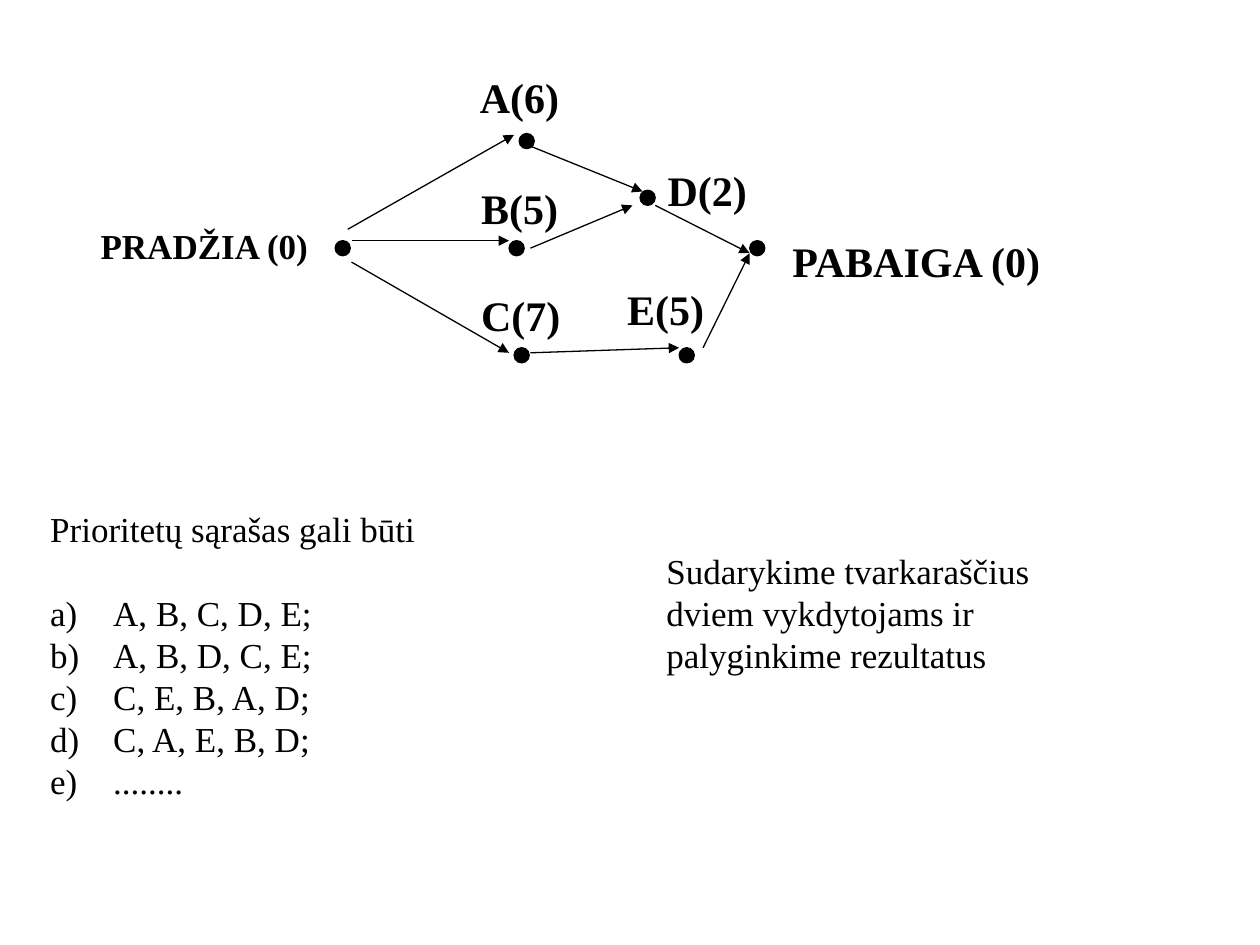
"""Build a slide with a task precedence graph and its priority lists."""
import pptx
import pptx.util
import pptx.dml.color
import pptx.enum.shapes
import pptx.oxml
import pptx.oxml.ns
from lxml import etree

Inches, Pt = pptx.util.Inches, pptx.util.Pt
BLACK = pptx.dml.color.RGBColor(0, 0, 0)
FONT = "Times New Roman"
DOT = 0.12
LINE = Pt(0.75)

HEADING = "Prioritetų sąrašas gali būti"
PRIORITIES = ["A, B, C, D, E;", "A, B, D, C, E;", "C, E, B, A, D;", "C, A, E, B, D;", "........"]
TASK = "Sudarykime tvarkaraščius dviem vykdytojams ir palyginkime rezultatus"

# name: dot left/top, label left/top/width/height, size
NODES = [
    ("PRADŽIA (0)", (2.66, 1.91), (0.7, 1.73, 2, 0.25), 20),
    ("A(6)", (4.12, 1.06), (3.71, 0.52, 0.94, 0.38), 24),
    ("B(5)", (4.04, 1.91), (3.72, 1.4, 1.23, 0.25), 24),
    ("C(7)", (4.08, 2.76), (3.72, 2.25, 0.99, 0.38), 24),
    ("D(2)", (5.08, 1.51), (5.2, 1.26, 0.99, 0.38), 24),
    ("E(5)", (5.39, 2.76), (4.88, 2.2, 0.94, 0.38), 24),
    ("PABAIGA (0)", (5.95, 1.91), (6.19, 1.82, 2.32, 0.38), 24),
]
ARROWS = [
    ((2.76, 1.82), (4.08, 1.07)),
    ((2.79, 1.91), (4.04, 1.91)),
    ((2.79, 2.08), (4.04, 2.8)),
    ((4.16, 1.14), (5.1, 1.52)),
    ((4.21, 1.97), (5.02, 1.63)),
    ((4.21, 2.8), (5.39, 2.76)),
    ((5.2, 1.63), (5.95, 2.01)),
    ((5.58, 2.76), (5.95, 2.01)),
]


def add_text(page, place, lines, size, bold=False, spacing=None):
    box = page.shapes.add_textbox(*map(Inches, place))
    frame = box.text_frame
    frame.word_wrap = True
    frame.text = "\n".join(lines)
    for para in frame.paragraphs:
        para.font.name, para.font.size, para.font.bold = FONT, Pt(size), bold
        para.font.color.rgb = BLACK
        para.line_spacing = spacing
    return frame.paragraphs


def add_dot(page, left, top):
    dot = page.shapes.add_shape(
        pptx.enum.shapes.MSO_SHAPE.FLOWCHART_CONNECTOR, *map(Inches, (left, top, DOT, DOT)))
    dot.shadow.inherit = False
    dot.fill.solid()
    dot.fill.fore_color.rgb = BLACK
    dot.line.color.rgb = BLACK
    dot.line.width = LINE


def add_arrow(page, start, end):
    arrow = page.shapes.add_connector(
        pptx.enum.shapes.MSO_CONNECTOR.STRAIGHT, *map(Inches, start + end))
    arrow.line.color.rgb = BLACK
    arrow.line.width = LINE
    qn = pptx.oxml.ns.qn
    etree.SubElement(arrow.line._get_or_add_ln(), qn("a:tailEnd"), type="triangle")
    etree.SubElement(arrow._element.spPr, qn("a:effectLst"))


def add_letter(para):
    props = para._p.get_or_add_pPr()
    props.set("marL", str(Inches(0.5)))
    props.set("indent", str(-Inches(0.5)))
    bullet = pptx.oxml.parse_xml(
        f'<a:buAutoNum {pptx.oxml.ns.nsdecls("a")} type="alphaLcParenR"/>')
    props.insert_element_before(bullet, "a:tabLst", "a:defRPr", "a:extLst")


def main():
    deck = pptx.Presentation()
    deck.slide_width, deck.slide_height = Inches(10), Inches(7.5)
    page = deck.slides.add_slide(deck.slide_layouts[6])
    heading, *items = add_text(
        page, (0.3, 3.98, 3.95, 2.46), [HEADING] + PRIORITIES, 20, spacing=Pt(24))
    heading.space_after = Pt(24)
    for item in items:
        add_letter(item)
    for start, end in ARROWS:
        add_arrow(page, start, end)
    for name, spot, place, size in NODES:
        add_dot(page, *spot)
        add_text(page, place, [name], size, bold=True)
    add_text(page, (5.19, 4.31, 3.62, 1.11), [TASK], 20, spacing=Pt(24))
    deck.save("out.pptx")


if __name__ == "__main__":
    main()
